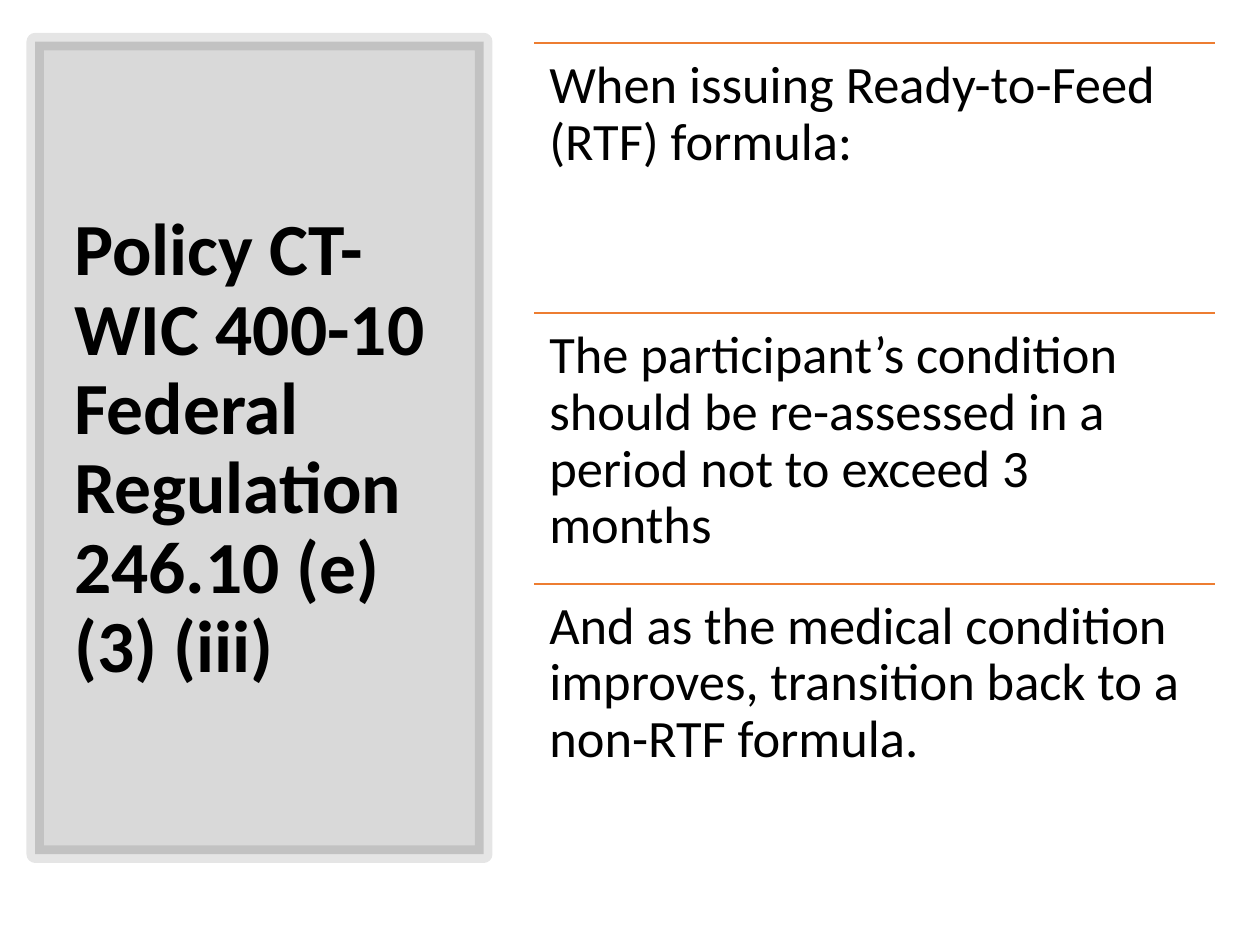
from lxml import etree
from pptx import Presentation
from pptx.dml.color import RGBColor
from pptx.enum.shapes import MSO_CONNECTOR, MSO_SHAPE
from pptx.enum.text import MSO_ANCHOR, PP_ALIGN
from pptx.oxml.ns import qn
from pptx.util import Inches, Pt

RECTANGLE = MSO_SHAPE.RECTANGLE
STRAIGHT = MSO_CONNECTOR.STRAIGHT
TOP, MIDDLE = MSO_ANCHOR.TOP, MSO_ANCHOR.MIDDLE
LEFT = PP_ALIGN.LEFT

TITLE = "Policy CT-WIC 400-10 \vFederal Regulation 246.10 (e) (3) (iii)"
STEPS = [
    "When issuing Ready-to-Feed (RTF) formula:",
    "The participant’s condition should be re-assessed in a period not to exceed 3 months",
    "And as the medical condition improves, transition back to a non-RTF formula.",
]

FONT, BLACK, ORANGE = "Calibri", "000000", "ED7D31"
SLIDE_WIDTH, SLIDE_HEIGHT = 10, 7.5
PANEL = (0.28, 0.33, 3.56, 6.45)
TITLE_BOX = (0.49, 0.7, 3.12, 5.75)
STEPS_LEFT, STEPS_TOP, STEPS_WIDTH, STEPS_HEIGHT = 4.24, 0.34, 5.4, 6.44


def color(hex_code):
    """Return the colour for a hex string."""
    return RGBColor.from_string(hex_code)


def paint(fill, hex_code, opacity=100):
    """Fill with a solid colour at a percentage of opacity."""
    fill.solid()
    fill.fore_color.rgb = color(hex_code)
    if opacity < 100:
        for tint in fill._xPr.iter(qn("a:srgbClr")):
            etree.SubElement(tint, qn("a:alpha"), val=str(opacity * 1000))


def add_panel(slide, box):
    """Draw the translucent framed panel behind the title."""
    panel = slide.shapes.add_shape(RECTANGLE, *map(Inches, box))
    panel.shadow.inherit = False
    panel.line.width = Pt(10)
    paint(panel.fill, BLACK, opacity=15)
    paint(panel.line.fill, BLACK, opacity=10)


def add_text(slide, text, box, size, bold=False, anchor=TOP, insets=(0.1, 0.05), space_after=0):
    """Place one wrapped paragraph in a box given in inches."""
    frame = slide.shapes.add_textbox(*map(Inches, box)).text_frame
    frame.word_wrap = True
    frame.vertical_anchor = anchor
    frame.margin_left = frame.margin_right = Inches(insets[0])
    frame.margin_top = frame.margin_bottom = Inches(insets[1])
    paragraph = frame.paragraphs[0]
    paragraph.text = text
    paragraph.alignment = LEFT
    paragraph.line_spacing = 0.9
    paragraph.space_after = Pt(space_after)
    for run in paragraph.runs:
        run.font.name = FONT
        run.font.size = Pt(size)
        run.font.bold = bold
        run.font.color.rgb = color(BLACK)


def add_rule(slide, left, top, width):
    """Draw a thin horizontal divider."""
    ends = (left, top, left + width, top)
    rule = slide.shapes.add_connector(STRAIGHT, *map(Inches, ends))
    rule.line.width = Pt(1)
    rule.line.color.rgb = color(ORANGE)
    etree.SubElement(rule._element.spPr, qn("a:effectLst"))


def main():
    """Build the policy slide and save it."""
    deck = Presentation()
    deck.slide_width, deck.slide_height = Inches(SLIDE_WIDTH), Inches(SLIDE_HEIGHT)
    slide = deck.slides.add_slide(deck.slide_layouts[6])

    add_panel(slide, PANEL)
    add_text(slide, TITLE, TITLE_BOX, size=42, bold=True, anchor=MIDDLE)

    row_height = STEPS_HEIGHT / len(STEPS)
    for row, step in enumerate(STEPS):
        top = STEPS_TOP + row * row_height
        add_rule(slide, STEPS_LEFT, top, STEPS_WIDTH)
        add_text(slide, step, (STEPS_LEFT, top, STEPS_WIDTH, row_height),
                 size=30, insets=(0.12, 0.12), space_after=10.5)

    deck.save("out.pptx")


if __name__ == "__main__":
    main()
